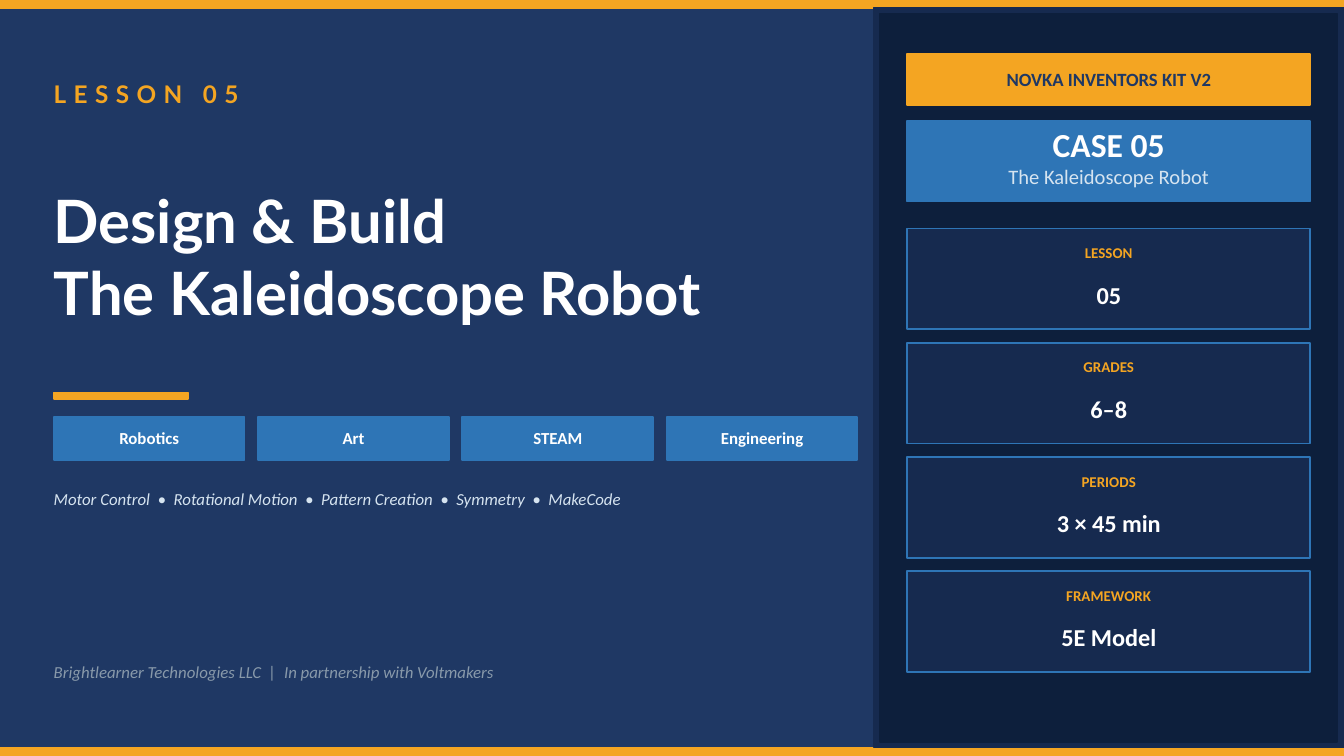
from pptx import Presentation
from pptx.dml.color import RGBColor
from pptx.enum.shapes import MSO_SHAPE
from pptx.enum.text import MSO_ANCHOR, MSO_AUTO_SIZE, PP_ALIGN
from pptx.util import Inches, Pt

INK = {
    "navy": "1F3864", "deep": "162A4F", "night": "0D1F3C", "gold": "F4A522",
    "blue": "2E75B6", "white": "FFFFFF", "pale": "D6E4F0", "gray": "8899AA",
}


def color(name):
    return RGBColor.from_string(INK[name])


def write(text, at=None, shape=None, size=9, ink="white", font="Calibri",
          bold=False, italic=False, align=PP_ALIGN.LEFT,
          anchor=MSO_ANCHOR.MIDDLE, track=0):
    """Put text in the given shape, or in a new text box placed at `at`."""
    if shape is None:
        shape = slide.shapes.add_textbox(*map(Inches, at))
    frame = shape.text_frame
    frame.text = text
    frame.word_wrap = True
    frame.auto_size = MSO_AUTO_SIZE.NONE
    frame.vertical_anchor = anchor
    frame.margin_left = frame.margin_right = 0
    frame.margin_top = frame.margin_bottom = 0
    for para in frame.paragraphs:
        para.alignment = align
        for run in para.runs:
            run.font.name = font
            run.font.size = Pt(size)
            run.font.bold = bold
            run.font.italic = italic
            run.font.color.rgb = color(ink)
            if track:
                run.font._element.set("spc", str(track * 100))


def block(at, fill, line=None):
    shape = slide.shapes.add_shape(MSO_SHAPE.RECTANGLE, *map(Inches, at))
    shape.shadow.inherit = False
    shape.fill.solid()
    shape.fill.fore_color.rgb = color(fill)
    shape.line.color.rgb = color(line or fill)
    shape.line.width = Pt(1)
    return shape


deck = Presentation()
deck.slide_width = Inches(10)
deck.slide_height = deck.slide_width * 9 // 16
slide = deck.slides.add_slide(deck.slide_layouts[5])
slide.background.fill.solid()
slide.background.fill.fore_color.rgb = color("navy")

# Top and bottom bands, then the side panel
band = 0.06
for top in (0, deck.slide_height.inches - band if hasattr(deck.slide_height, "inches")
            else 10 * 9 / 16 - band):
    block((0, top, 10, band), "gold")
block((6.5, 0.06, 3.5, 5.5), "deep")
block((6.55, 0.1, 3.4, 5.42), "night")

# Kit and case headings
side, wide = 6.75, 3
mid = PP_ALIGN.CENTER
kit = block((side, 0.4, wide, 0.38), "gold")
write("NOVKA INVENTORS KIT V2", shape=kit, size=10, ink="navy", bold=True, align=mid)
block((side, 0.9, wide, 0.6), "blue")
write("CASE 05", (side, 0.9, wide, 0.32), size=18, bold=True, align=mid,
      anchor=MSO_ANCHOR.BOTTOM)
write("The Kaleidoscope Robot", (side, 1.22, wide, 0.28), size=11, ink="pale",
      align=mid, anchor=MSO_ANCHOR.TOP)

# Fact cards
facts = [("LESSON", "05"), ("GRADES", "6–8"), ("PERIODS", "3 × 45 min"),
         ("FRAMEWORK", "5E Model")]
for row, (label, value) in enumerate(facts):
    top = 1.7 + row * 0.85
    block((side, top, wide, 0.75), "deep", "blue")
    write(label, (side, top + 0.04, wide, 0.28), size=8, ink="gold", bold=True, align=mid)
    write(value, (side, top + 0.3, wide, 0.38), size=13, bold=True, align=mid)

# Lesson number and title
left, span = 0.4, 5.9
write("LESSON 05", (left, 0.5, span, 0.4), size=13, ink="gold", font="Lato",
      bold=True, track=4)
title = slide.shapes.title
title.left, title.top = Inches(left), Inches(0.95)
title.width, title.height = Inches(span), Inches(1.9)
write("Design & Build\nThe Kaleidoscope Robot", shape=title, size=32, font="Lato",
      bold=True)
block((left, 2.92, 1, 0.05), "gold")

# Subject tags
for col, tag in enumerate(["Robotics", "Art", "STEAM", "Engineering"]):
    pill = block((left + col * 1.52, 3.1, 1.42, 0.32), "blue")
    write(tag, shape=pill, bold=True, align=mid)

# Topics and credit
topics = ["Motor Control", "Rotational Motion", "Pattern Creation", "Symmetry", "MakeCode"]
write("  •  ".join(topics), (left, 3.55, span, 0.32), ink="pale", italic=True)
write("Brightlearner Technologies LLC  |  In partnership with Voltmakers",
      (left, 4.85, span, 0.3), ink="gray", italic=True)

deck.save("out.pptx")
